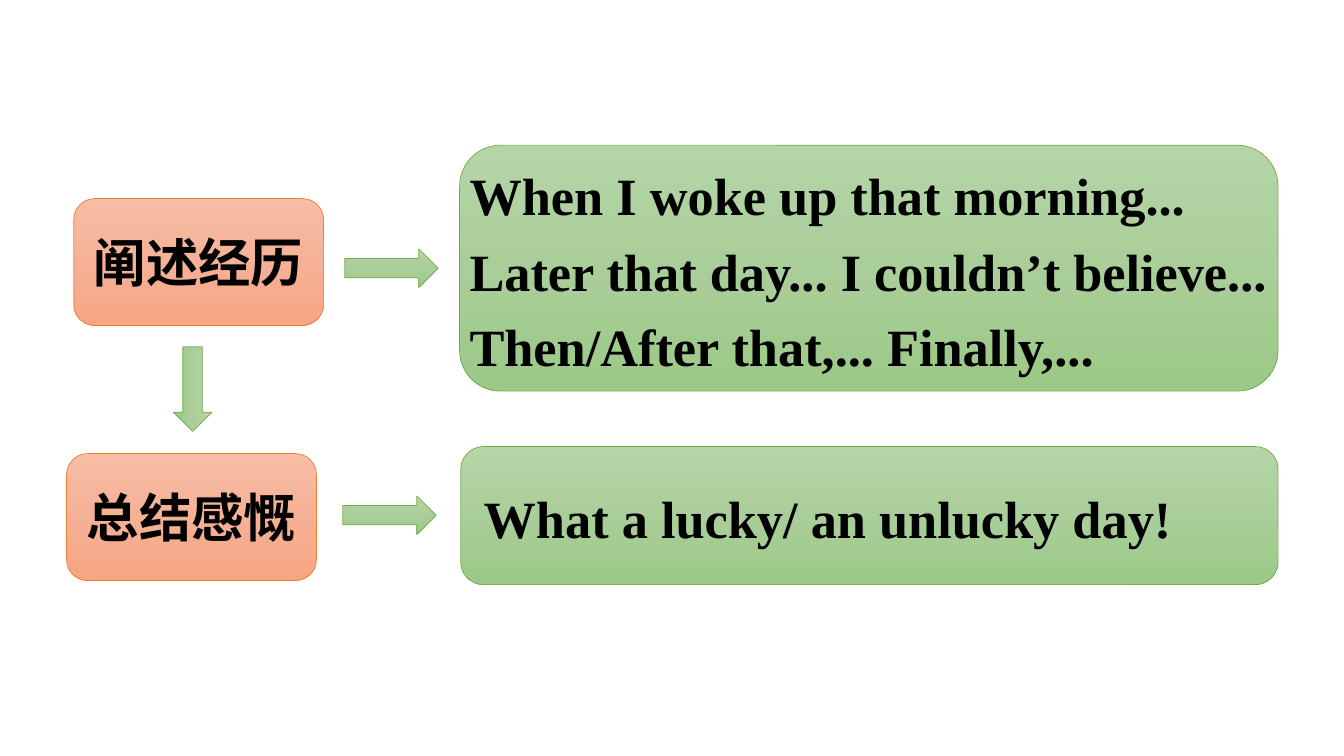
import copy
from dataclasses import dataclass, field

import pptx
import pptx.dml.color
import pptx.enum.shapes
import pptx.enum.text
import pptx.oxml.ns
import pptx.oxml.xmlchemy
import pptx.util

WIDE, HIGH = pptx.util.Inches(13.333), pptx.util.Inches(7.5)
KIND = pptx.enum.shapes.MSO_SHAPE
ALIGN = pptx.enum.text.PP_ALIGN
ANCHOR = pptx.enum.text.MSO_ANCHOR
FIT = pptx.enum.text.MSO_AUTO_SIZE


@dataclass(frozen=True)
class Tone:
    stops: tuple[str, str, str]
    line: str


@dataclass(frozen=True)
class Theme:
    peach: Tone = field(default=Tone(("F7BDA5", "F5B196", "F8A582"), "ED7D31"))
    green: Tone = field(default=Tone(("B5D5A7", "AACE9A", "9CC987"), "70AD47"))
    ink: str = "000000"
    size: float = 37.4
    edge: float = 0.5
    han: str = "Noto Sans CJK SC"
    latin: str = "Times New Roman"
    lead: float = 1.2


@dataclass(frozen=True)
class Area:
    """Left, top, width and height in percent of the slide."""
    x: float
    y: float
    w: float
    h: float

    def frame(self) -> tuple[int, int, int, int]:
        return (round(WIDE * self.x / 100), round(HIGH * self.y / 100),
                round(WIDE * self.w / 100), round(HIGH * self.h / 100))


@dataclass(frozen=True)
class Step:
    area: Area
    title: str


@dataclass(frozen=True)
class Arrow:
    area: Area
    turn: int = 0


@dataclass(frozen=True)
class Panel:
    area: Area
    text: Area
    lines: tuple[str, ...]


THEME = Theme()

STEPS = (
    Step(Area(5.48, 26.27, 18.6, 16.8), "阐述经历"),
    Step(Area(4.95, 60, 18.6, 16.8), "总结感慨"),
)
ARROWS = (
    Arrow(Area(25.65, 32.93, 6.95, 5.1)),
    Arrow(Area(25.5, 65.6, 6.95, 5.1)),
    Arrow(Area(11.18, 48.93, 6.3, 5.1), 90),
)
PANELS = (
    Panel(Area(34.2, 19.2, 60.9, 32.53), Area(34.2, 19.33, 61.88, 31.6),
          ("When I woke up that morning...",
           "Later that day... I couldn’t believe... Then/After that,... Finally,...")),
    Panel(Area(34.28, 59.07, 60.82, 18.27), Area(35.25, 62, 56.18, 11.33),
          ("What a lucky/ an unlucky day!",)),
)


def rgb(code: str) -> pptx.dml.color.RGBColor:
    return pptx.dml.color.RGBColor.from_string(code)


def block(shapes, kind: KIND, area: Area, tone: Tone) -> pptx.shapes.autoshape.Shape:
    """Draw a preset shape shaded from top to bottom."""
    shape = shapes.add_shape(kind, *area.frame())
    shape.shadow.inherit = False
    shape.fill.gradient()
    shape.fill.gradient_angle = 270
    first = shape._element.spPr.find(".//" + pptx.oxml.ns.qn("a:gs"))
    first.addnext(copy.deepcopy(first))
    for spot, (stop, code) in enumerate(zip(shape.fill.gradient_stops, tone.stops)):
        stop.position = spot / 2
        stop.color.rgb = rgb(code)
    shape.line.color.rgb = rgb(tone.line)
    shape.line.width = pptx.util.Pt(THEME.edge)
    return shape


def write(para: pptx.text.text._Paragraph, words: str, face: str) -> None:
    run = para.add_run()
    run.text = words
    run.font.name = face
    run.font.size = pptx.util.Pt(THEME.size)
    run.font.bold = True
    run.font.color.rgb = rgb(THEME.ink)
    east = pptx.oxml.xmlchemy.OxmlElement("a:ea")
    east.set("typeface", face)
    run.font._element.find(pptx.oxml.ns.qn("a:latin")).addnext(east)


def draw_step(shapes, step: Step) -> None:
    shape = block(shapes, KIND.ROUNDED_RECTANGLE, step.area, THEME.peach)
    frame = shape.text_frame
    frame.word_wrap = True
    frame.vertical_anchor = ANCHOR.MIDDLE
    para = frame.paragraphs[0]
    para.alignment = ALIGN.CENTER
    write(para, step.title, THEME.han)


def draw_arrow(shapes, arrow: Arrow) -> None:
    shape = block(shapes, KIND.RIGHT_ARROW, arrow.area, THEME.green)
    shape.rotation = arrow.turn


def draw_panel(shapes, panel: Panel) -> None:
    group = shapes.add_group_shape()
    block(group.shapes, KIND.ROUNDED_RECTANGLE, panel.area, THEME.green)
    frame = group.shapes.add_textbox(*panel.text.frame()).text_frame
    frame.word_wrap = True
    frame.auto_size = FIT.SHAPE_TO_FIT_TEXT
    for spot, words in enumerate(panel.lines):
        para = frame.add_paragraph() if spot else frame.paragraphs[0]
        para.line_spacing = THEME.lead
        write(para, words, THEME.latin)


def main() -> None:
    deck = pptx.Presentation()
    deck.slide_width, deck.slide_height = WIDE, HIGH
    shapes = deck.slides.add_slide(deck.slide_layouts[6]).shapes
    for step in STEPS:
        draw_step(shapes, step)
    for arrow in ARROWS:
        draw_arrow(shapes, arrow)
    for panel in PANELS:
        draw_panel(shapes, panel)
    deck.save("out.pptx")


if __name__ == "__main__":
    main()
